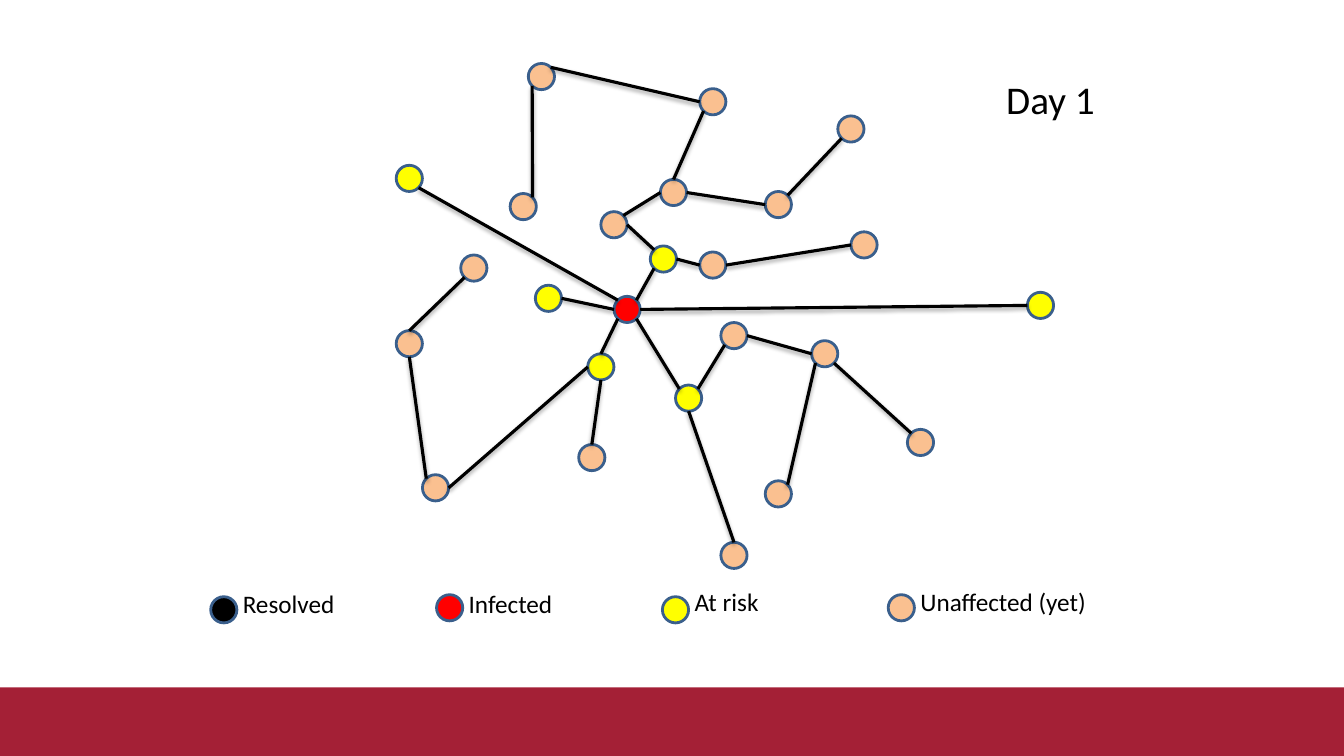
from math import sqrt

from lxml.etree import SubElement
from pptx import Presentation
from pptx.dml.color import RGBColor
from pptx.enum.shapes import MSO_CONNECTOR, MSO_SHAPE
from pptx.enum.text import MSO_ANCHOR, MSO_AUTO_SIZE, PP_ALIGN
from pptx.oxml.ns import qn
from pptx.util import Inches, Pt

COLORS = {
    "band": "A42036", "outline": "3A5F8C", "ink": "000000",
    "resolved": "000000", "infected": "FF0000",
    "at_risk": "FFFF00", "unaffected": "FAC090",
}
DOT = 0.26
DIAGONAL = 1 / sqrt(2)
# Unit vectors from the centre of a dot to its eight rim points
RIM = {
    "N": (0, -1), "S": (0, 1), "W": (-1, 0), "E": (1, 0),
    "NW": (-DIAGONAL, -DIAGONAL), "NE": (DIAGONAL, -DIAGONAL),
    "SW": (-DIAGONAL, DIAGONAL), "SE": (DIAGONAL, DIAGONAL),
}

# Left and top of each person, by state
PEOPLE = {
    "infected": {"source": (6.09, 2.94)},
    "at_risk": {
        "north": (6.45, 2.44), "south": (5.83, 3.51), "southeast": (6.7, 3.82),
        "west": (5.31, 2.83), "east": (10.19, 2.9), "northwest": (3.93, 1.64),
    },
    "unaffected": {
        "north_a": (5.96, 2.1), "north_b": (6.55, 1.78), "north_c": (7.59, 1.9),
        "north_d": (8.31, 1.15), "north_e": (6.94, 0.88), "north_f": (5.24, 0.63),
        "north_g": (5.06, 1.92), "north_h": (6.94, 2.5), "north_i": (8.44, 2.3),
        "south_a": (5.74, 4.41), "south_b": (4.19, 4.71), "south_c": (3.93, 3.28),
        "south_d": (4.57, 2.53),
        "southeast_a": (7.15, 3.2), "southeast_b": (8.05, 3.38),
        "southeast_c": (9, 4.26), "southeast_d": (7.59, 4.77),
        "southeast_e": (7.15, 5.38),
    },
}

# Contacts: person, rim point, person, rim point
CONTACTS = [
    ("source", "NE", "north", "SW"),
    ("source", "SE", "southeast", "NW"),
    ("west", "E", "source", "W"),
    ("south", "N", "source", "SW"),
    ("east", "W", "source", "E"),
    ("northwest", "SE", "source", "NW"),
    ("north", "NW", "north_a", "E"),
    ("north", "E", "north_h", "W"),
    ("north_i", "W", "north_h", "E"),
    ("north_a", "NE", "north_b", "W"),
    ("north_b", "E", "north_c", "W"),
    ("north_d", "SW", "north_c", "NE"),
    ("north_e", "SW", "north_b", "N"),
    ("north_f", "NE", "north_e", "W"),
    ("north_f", "SW", "north_g", "NE"),
    ("south_a", "N", "south", "S"),
    ("south_b", "E", "south", "W"),
    ("south_c", "S", "south_b", "NW"),
    ("south_d", "SW", "south_c", "N"),
    ("southeast", "NE", "southeast_a", "SW"),
    ("southeast_b", "W", "southeast_a", "E"),
    ("southeast_c", "NW", "southeast_b", "SE"),
    ("southeast_d", "NE", "southeast_b", "SW"),
    ("southeast_e", "N", "southeast", "S"),
]

# State, label, dot top, label top, label width
LEGEND = [
    ("resolved", "Resolved", 5.92, 5.79, 1.5),
    ("infected", "Infected", 5.9, 5.79, 1.36),
    ("at_risk", "At risk", 5.92, 5.77, 1.08),
    ("unaffected", "Unaffected (yet)", 5.9, 5.77, 2.49),
]


class NetworkSlide:
    def __init__(self, presentation):
        self.slide = presentation.slides.add_slide(presentation.slide_layouts[5])
        self.shapes = self.slide.shapes
        self.font = "Calibri"

    def color(self, name):
        return RGBColor.from_string(COLORS[name])

    def preset(self, kind, left, top, width, height, fill, outline=None):
        shape = self.shapes.add_shape(
            kind, Inches(left), Inches(top), Inches(width), Inches(height))
        shape.shadow.inherit = False
        shape.fill.solid()
        shape.fill.fore_color.rgb = self.color(fill)
        if outline:
            shape.line.color.rgb = self.color(outline)
            shape.line.width = Pt(2)
        else:
            shape.line.fill.background()

    def dot(self, left, top, state):
        self.preset(MSO_SHAPE.OVAL, left, top, DOT, DOT, state, "outline")

    def add_text(self, frame, text, size):
        frame.word_wrap = True
        frame.auto_size = MSO_AUTO_SIZE.NONE
        frame.vertical_anchor = MSO_ANCHOR.TOP
        paragraph = frame.paragraphs[0]
        paragraph.alignment = PP_ALIGN.LEFT
        run = paragraph.add_run()
        run.text = text
        run.font.name = self.font
        run.font.size = Pt(size)
        run.font.color.rgb = self.color("ink")

    def title(self, text, left, top, width, height):
        heading = self.shapes.title
        heading.left, heading.top = Inches(left), Inches(top)
        heading.width, heading.height = Inches(width), Inches(height)
        self.add_text(heading.text_frame, text, 28)

    def label(self, text, left, top, width):
        box = self.shapes.add_textbox(
            Inches(left), Inches(top), Inches(width), Inches(0.51))
        self.add_text(box.text_frame, text, 18)

    def contact(self, start, end):
        line = self.shapes.add_connector(
            MSO_CONNECTOR.STRAIGHT, *map(Inches, start + end))
        line.line.color.rgb = self.color("ink")
        line.line.width = Pt(2.25)
        # Soft shadow straight below the line
        effects = SubElement(line._element.spPr, qn("a:effectLst"))
        shadow = SubElement(
            effects, qn("a:outerShdw"), blurRad=str(Pt(3.1)), dist=str(Pt(1.8)),
            dir="5400000", rotWithShape="0")
        tint = SubElement(shadow, qn("a:srgbClr"), val=COLORS["ink"])
        SubElement(tint, qn("a:alpha"), val="35000")


def rim_point(corner, side):
    return tuple(c + DOT / 2 * (1 + d) for c, d in zip(corner, RIM[side]))


def main():
    presentation = Presentation()
    presentation.slide_width = Inches(13.33)
    presentation.slide_height = Inches(7.5)
    network = NetworkSlide(presentation)

    # Heading and bottom band
    network.title("Day 1", 9.88, 0.7, 1.12, 0.58)
    network.preset(MSO_SHAPE.RECTANGLE, 0, 6.82, 13.33, 0.68, "band")

    # People
    corners = {}
    for state, group in PEOPLE.items():
        corners.update(group)
        for corner in group.values():
            network.dot(*corner, state)

    # Contacts between them
    for first, first_side, second, second_side in CONTACTS:
        network.contact(rim_point(corners[first], first_side),
                        rim_point(corners[second], second_side))

    # Legend
    for index, (state, text, dot_top, label_top, width) in enumerate(LEGEND):
        left = 2.09 + 2.24 * index
        network.label(text, left + 0.22, label_top, width)
        network.dot(left, dot_top, state)

    presentation.save("out.pptx")


if __name__ == "__main__":
    main()
